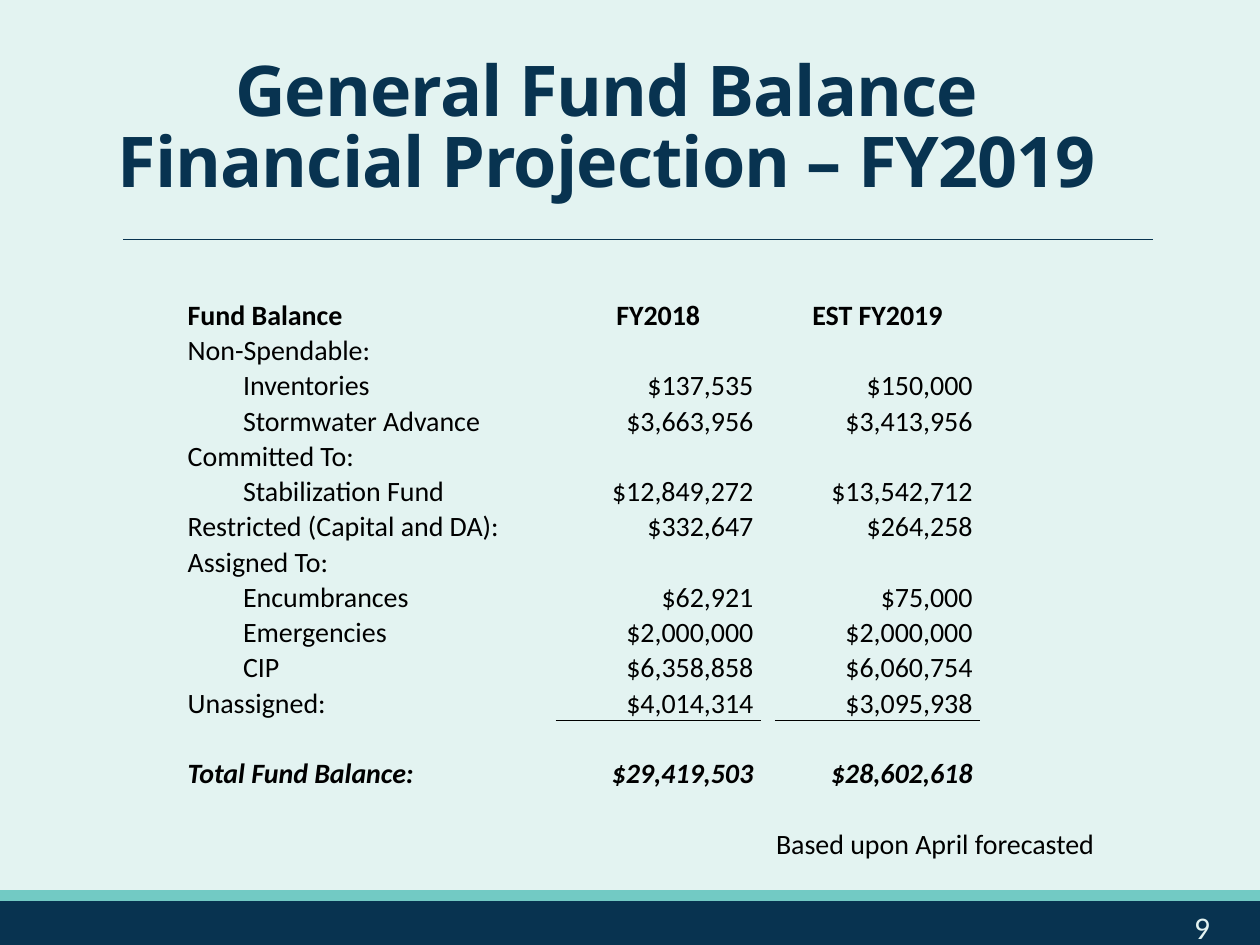
"""Build the general fund balance projection slide."""
import pptx
import pptx.dml.color
import pptx.enum.shapes
import pptx.enum.text
import pptx.oxml
import pptx.oxml.ns
import pptx.util

Inches = pptx.util.Inches
Pt = pptx.util.Pt
ALIGN = pptx.enum.text.PP_ALIGN
ANCHOR = pptx.enum.text.MSO_ANCHOR
COLORS = {"pale": "E3F3F1", "navy": "083350", "teal": "72CAC4", "black": "000000"}
NS = pptx.oxml.ns.nsdecls("a")
PLAIN = "{2D5ABB26-0587-4C30-8999-92F81FD0307C}"
WIDTHS = [0.44, 0.44, 2.3, 0.19, 1.63, 0.11, 1.63, 0.57, 1.01]
HEIGHT = 0.28
COUNT = 17
FUNDS = [
    (1, "Non-Spendable:"),
    (2, "Inventories", "$137,535", "$150,000"),
    (2, "Stormwater Advance", "$3,663,956", "$3,413,956"),
    (1, "Committed To:"),
    (2, "Stabilization Fund", "$12,849,272", "$13,542,712"),
    (1, "Restricted (Capital and DA):", "$332,647", "$264,258"),
    (1, "Assigned To:"),
    (2, "Encumbrances", "$62,921", "$75,000"),
    (2, "Emergencies", "$2,000,000", "$2,000,000"),
    (2, "CIP", "$6,358,858", "$6,060,754"),
    (1, "Unassigned:", "$4,014,314", "$3,095,938"),
]


def color(name):
    return pptx.dml.color.RGBColor.from_string(COLORS[name])


def style(para, face, size, tint, align, bold=False, italic=False):
    para.alignment = align
    for run in para.runs:
        font = run.font
        font.name, font.size = face, Pt(size)
        font.bold, font.italic = bold, italic
        font.color.rgb = color(tint)


def band(slide, top, height, tint):
    kind = pptx.enum.shapes.MSO_SHAPE.RECTANGLE
    shape = slide.shapes.add_shape(kind, 0, Inches(top), Inches(10), Inches(height))
    shape.shadow.inherit = False
    shape.fill.solid()
    shape.fill.fore_color.rgb = color(tint)
    shape.line.color.rgb = color(tint)
    shape.line.width = Pt(1.25)


def rule(slide, left, right, top):
    kind = pptx.enum.shapes.MSO_CONNECTOR.STRAIGHT
    line = slide.shapes.add_connector(
        kind, Inches(left), Inches(top), Inches(right), Inches(top))
    line.line.color.rgb = color("navy")
    line.line.width = Pt(0.5)
    line._element.spPr.append(pptx.oxml.parse_xml(f"<a:effectLst {NS}/>"))


def label(slide, text, box, anchor, *look, bold=False):
    frame = slide.shapes.add_textbox(*map(Inches, box)).text_frame
    frame.word_wrap = True
    frame.vertical_anchor = anchor
    frame.text = text
    para = frame.paragraphs[0]
    style(para, *look, ALIGN.CENTER, bold=bold)
    return para


def clear(cell):
    cell.margin_left = cell.margin_right = cell.margin_top = Inches(0.01)
    cell.margin_bottom = 0
    cell.vertical_anchor = ANCHOR.BOTTOM
    cell.fill.background()
    para = cell.text_frame.paragraphs[0]
    para._p.append(pptx.oxml.parse_xml(f'<a:endParaRPr {NS} sz="1600"/>'))


def write(cell, text, align=ALIGN.LEFT, **look):
    cell.text = text
    style(cell.text_frame.paragraphs[0], "Calibri", 16, "black", align, **look)


def border(cell):
    cell._tc.get_or_add_tcPr().insert(0, pptx.oxml.parse_xml(
        f'<a:lnB {NS} w="6350"><a:solidFill><a:srgbClr val="{COLORS["black"]}"/>'
        "</a:solidFill></a:lnB>"))


def entry(table, row, col, name, *values, align=ALIGN.RIGHT, **look):
    cell = table.cell(row, col)
    if col == 1:
        last = 3 if name.startswith("Restricted") else 2
        cell.merge(table.cell(row, last))
    write(cell, name, **look)
    for place, value in zip((4, 6), values):
        text = f"{value} " if align == ALIGN.RIGHT else value
        write(table.cell(row, place), text, align, **look)


def grid(slide):
    table = slide.shapes.add_table(
        COUNT, len(WIDTHS), Inches(1.04), Inches(2.08),
        Inches(sum(WIDTHS)), Inches(HEIGHT * COUNT)).table
    table.first_row = table.horz_banding = False
    table._tbl.tblPr.find(pptx.oxml.ns.qn("a:tableStyleId")).text = PLAIN
    for column, width in zip(table.columns, WIDTHS):
        column.width = Inches(width)
    for row in table.rows:
        row.height = Inches(HEIGHT)
        for cell in row.cells:
            clear(cell)
    entry(table, 1, 1, "Fund Balance", "FY2018", "EST FY2019",
          align=ALIGN.CENTER, bold=True)
    for row, fund in enumerate(FUNDS, 2):
        entry(table, row, *fund)
    for col in (4, 6):
        border(table.cell(12, col))
    entry(table, 14, 1, "Total Fund Balance:", "$29,419,503", "$28,602,618",
          bold=True, italic=True)
    note = table.cell(16, 6)
    note.merge(table.cell(16, 8))
    write(note, "Based upon April forecasted")


def main():
    deck = pptx.Presentation()
    deck.slide_width, deck.slide_height = Inches(10), Inches(7.5)
    slide = deck.slides.add_slide(deck.slide_layouts[6])
    slide.background.fill.solid()
    slide.background.fill.fore_color.rgb = color("pale")
    band(slide, 7.15, 0.5, "navy")
    band(slide, 7.07, 0.07, "teal")
    rule(slide, 0.98, 9.15, 1.9)
    title = label(slide, "General Fund Balance\vFinancial Projection – FY2019",
                  (0.25, 0.2, 9.13, 1.45), ANCHOR.BOTTOM,
                  "Open Sans", 40, "navy", bold=True)
    title.line_spacing = 0.85
    for run in title.runs:
        run.font._element.set("spc", "-50")
    label(slide, "9", (9.08, 7.16, 0.92, 0.43), ANCHOR.TOP, "Calibri", 18, "pale")
    grid(slide)
    deck.save("out.pptx")


if __name__ == "__main__":
    main()
